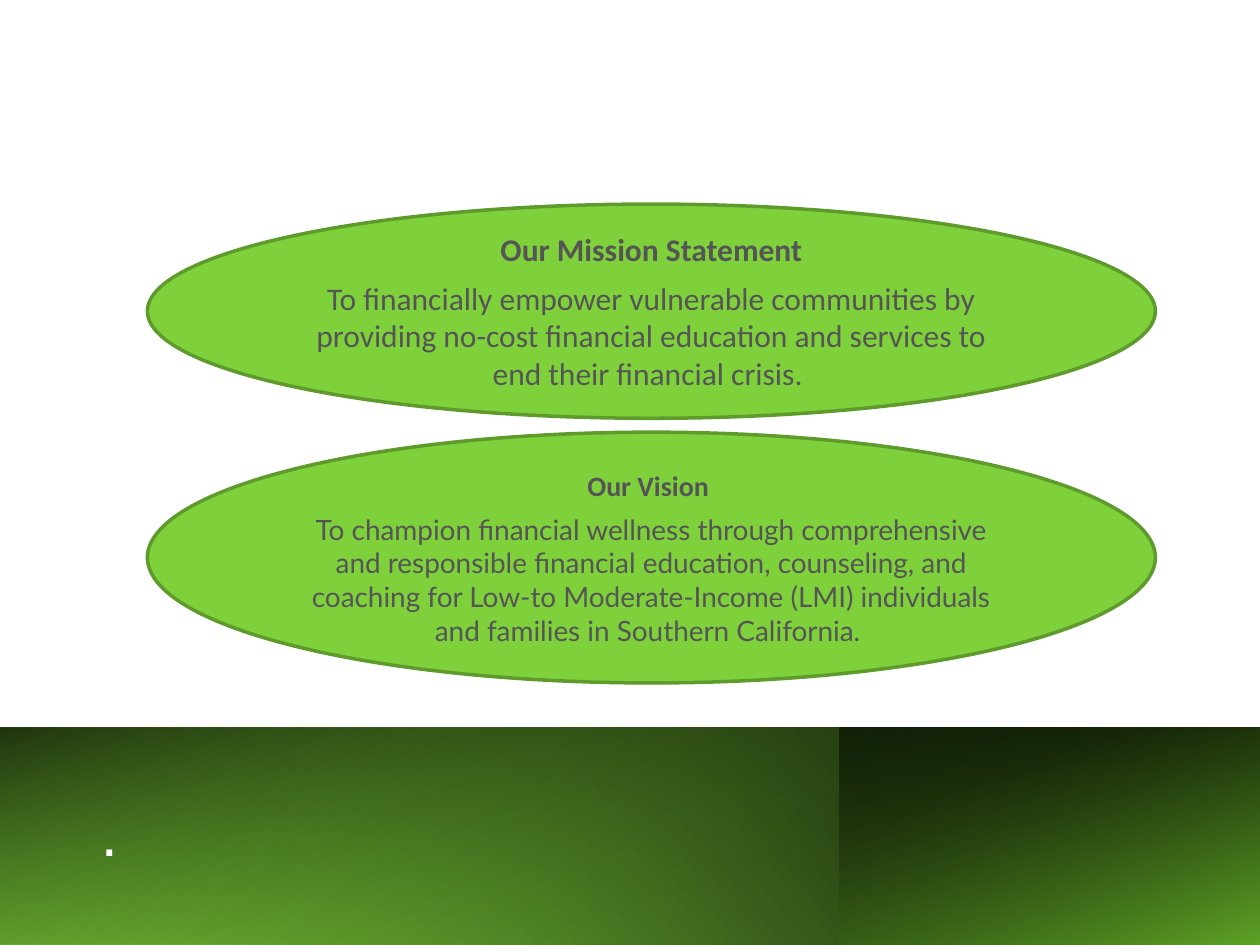
from lxml.etree import SubElement
from pptx import Presentation
from pptx.dml.color import RGBColor
from pptx.enum.shapes import MSO_SHAPE as Preset
from pptx.enum.text import MSO_ANCHOR as Anchor, PP_ALIGN as Align
from pptx.oxml.ns import qn
from pptx.util import Inches, Pt

LIME = RGBColor(0x7F, 0xD1, 0x3B)
LEAF = RGBColor(0x5F, 0xA3, 0x26)
MOSS = RGBColor(0x3F, 0x6D, 0x19)
OUTLINE = RGBColor(0x5E, 0x9B, 0x2C)
BLACK = RGBColor(0, 0, 0)
WHITE = RGBColor(0xFF, 0xFF, 0xFF)
GREY = RGBColor(0x55, 0x55, 0x55)

WIDTH, HEIGHT = Inches(10), Inches(7.5)
BAND_TOP = 0.77    # share of the slide height
PANEL_LEFT = 2 / 3  # share of the slide width

MISSION = [
    ("Our Mission Statement", dict(name="Calibri", size=Pt(18), bold=True)),
    ("To financially empower vulnerable communities by providing no-cost "
     "financial education and services to end their financial crisis. ",
     dict(name="Calibri", size=Pt(18), bold=False)),
]
VISION = [
    ("Our Vision ", dict(name="Calibri", size=Pt(16), bold=True)),
    ("To champion financial wellness through comprehensive and responsible "
     "financial education, counseling, and coaching for Low-to "
     "Moderate-Income (LMI) individuals and families in Southern California. ",
     dict(name="Lato", size=Pt(16), bold=False)),
]


def share_box(left, top, width, height):
    """Turn shares of the slide into lengths."""
    return (int(WIDTH * left), int(HEIGHT * top),
            int(WIDTH * width), int(HEIGHT * height))


def format_font(font, color, **values):
    for key, value in values.items():
        setattr(font, key, value)
    font.color.rgb = color


def add_gradient(slide, box, angle, stops):
    """Rectangle with a linear gradient of (position, colour, opacity) stops."""
    layer = slide.shapes.add_shape(Preset.RECTANGLE, *box)
    layer.shadow.inherit = False
    layer.line.fill.background()
    layer.fill.gradient()
    gradient = layer._element.spPr.find(qn("a:gradFill"))
    for child in list(gradient):
        gradient.remove(child)
    stop_list = SubElement(gradient, qn("a:gsLst"))
    for position, color, opacity in stops:
        stop = SubElement(stop_list, qn("a:gs"), pos=str(position * 1000))
        tint = SubElement(stop, qn("a:srgbClr"), val=str(color))
        if opacity < 100:
            SubElement(tint, qn("a:alpha"), val=str(opacity * 1000))
    SubElement(gradient, qn("a:lin"), ang=str(angle * 60000), scaled="0")


def add_footer_band(slide, left, top, width, height):
    """Green band made of three layered gradients."""
    band = (left, top, width, height)
    panel_offset = int(width * PANEL_LEFT)
    panel = (left + panel_offset, top, width - panel_offset, height)
    for box, angle, stops in (
        (band, 320, [(0, LIME, 100), (100, BLACK, 100)]),
        (panel, 70, [(0, BLACK, 63), (100, LEAF, 100)]),
        (band, 250, [(39, MOSS, 0), (100, BLACK, 71)]),
    ):
        add_gradient(slide, box, angle, stops)


def place_title(slide, left, top, width, height):
    title = slide.shapes.title
    slide.shapes._spTree.append(title._element)  # in front of the band
    title.left, title.top, title.width, title.height = left, top, width, height
    frame = title.text_frame
    frame.text = "."
    frame.vertical_anchor = Anchor.MIDDLE
    line = frame.paragraphs[0]
    line.alignment, line.line_spacing = Align.LEFT, 0.9
    format_font(line.runs[0].font, WHITE, name="Arial", size=Pt(35))


def add_statement(slide, box, paragraphs):
    """Green ellipse with a heading and a sentence."""
    oval = slide.shapes.add_shape(Preset.OVAL, *box)
    oval.shadow.inherit = False
    oval.fill.solid()
    oval.fill.fore_color.rgb = LIME
    oval.line.color.rgb = OUTLINE
    oval.line.width = Pt(2)
    frame = oval.text_frame
    frame.word_wrap = True
    frame.vertical_anchor = Anchor.MIDDLE
    for index, (text, values) in enumerate(paragraphs):
        line = frame.add_paragraph() if index else frame.paragraphs[0]
        line.alignment, line.space_after = Align.CENTER, Pt(6)
        run = line.add_run()
        run.text = text
        format_font(run.font, GREY, **values)


def main():
    deck = Presentation()
    deck.slide_width, deck.slide_height = WIDTH, HEIGHT
    slide = deck.slides.add_slide(deck.slide_layouts[5])  # title only

    # Footer band with the title on it
    add_footer_band(slide, *share_box(0, BAND_TOP, 1, 1 - BAND_TOP))
    place_title(slide, *share_box(0.07, 0.82, 0.87, 0.13))

    # Mission and vision
    for top, height, statement in ((1.62, 1.7, MISSION), (3.43, 1.99, VISION)):
        box = share_box(0.117, top / 7.5, 0.8, height / 7.5)
        add_statement(slide, box, statement)

    deck.save("out.pptx")


if __name__ == "__main__":
    main()
